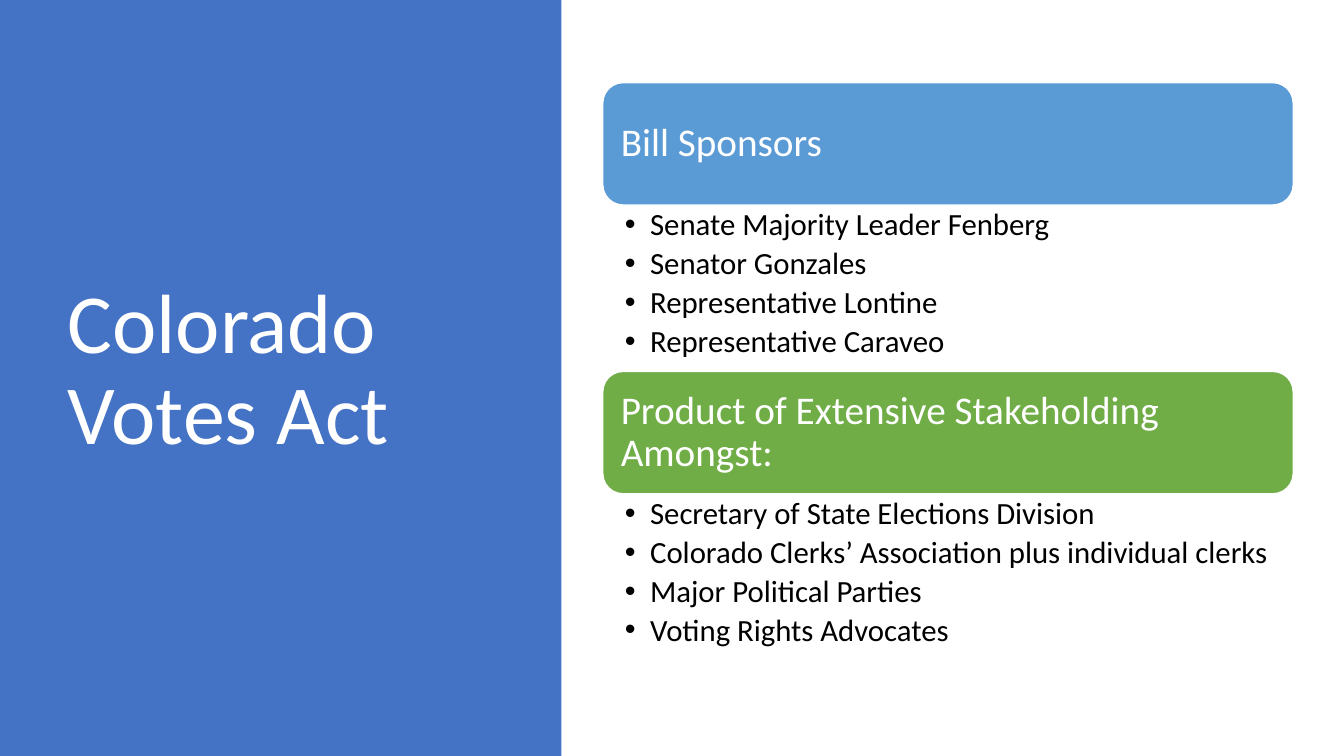
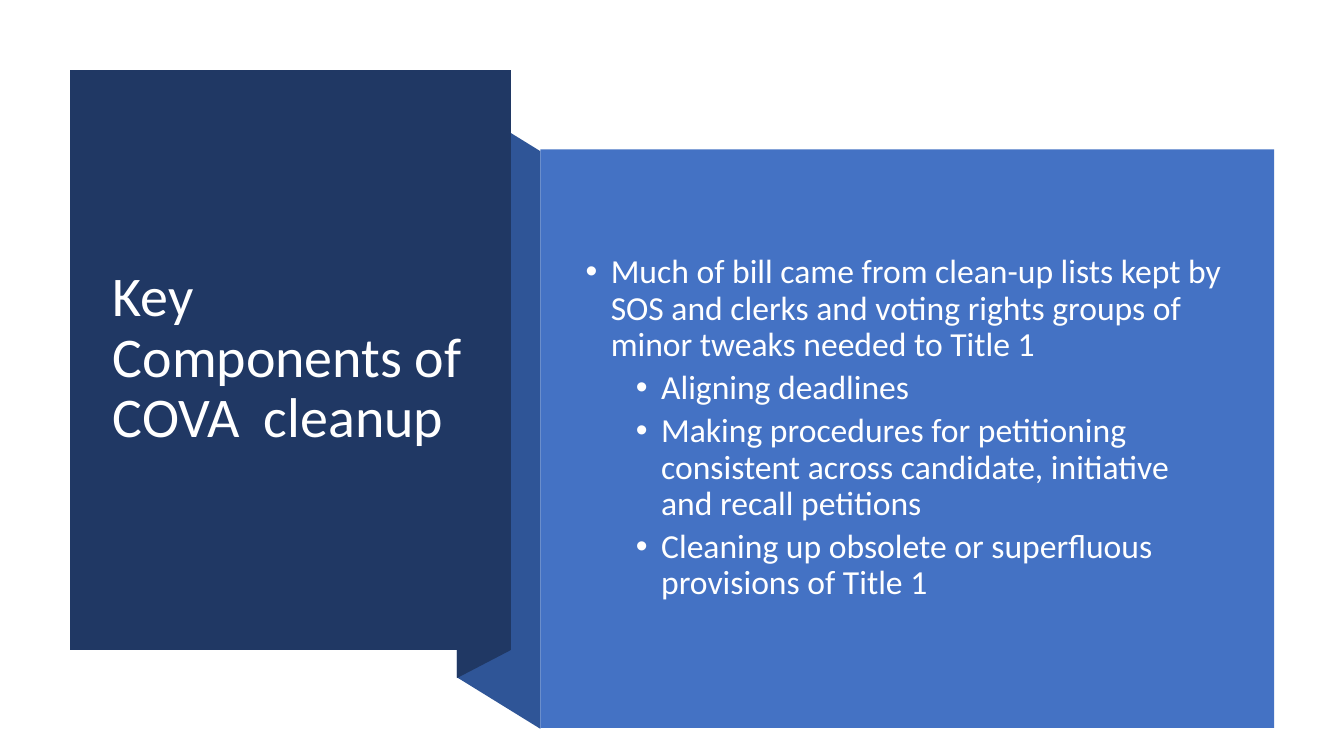
from dataclasses import dataclass

import pptx
import pptx.dml.color
import pptx.enum.shapes
import pptx.enum.text
import pptx.util
from lxml import etree

Inches, Pt = pptx.util.Inches, pptx.util.Pt
SHAPE = pptx.enum.shapes.MSO_SHAPE
ANCHOR = pptx.enum.text.MSO_ANCHOR
DRAWING = "{http://schemas.openxmlformats.org/drawingml/2006/main}"

SLIDE_WIDTH, SLIDE_HEIGHT = Inches(13.33), Inches(7.5)
BULLET_INDENT = 0.25
TEXT_INSETS = (0.1, 0.05)


@dataclass(frozen=True)
class Theme:
    font: str = "Calibri"
    bullet_font: str = "Arial"
    blue: str = "4472C4"
    light_blue: str = "5B9BD5"
    green: str = "70AD47"
    navy: str = "203864"
    fold_blue: str = "2F5597"
    white: str = "FFFFFF"
    black: str = "000000"
    large_title: int = 60
    title: int = 40
    heading: int = 28
    body: int = 24
    item: int = 22
    line_spacing: float = 0.9


THEME = Theme()


def across(percent):
    return round(SLIDE_WIDTH * percent / 100)


def down(percent):
    return round(SLIDE_HEIGHT * percent / 100)


def area(left, top, width, height):
    """Turn percentages of the slide into a position and a size."""
    return across(left), down(top), across(width), down(height)


def rgb(value):
    return pptx.dml.color.RGBColor.from_string(value)


def paint(shape, color, outline=None):
    shape.shadow.inherit = False
    shape.fill.solid()
    shape.fill.fore_color.rgb = rgb(color)
    if outline:
        shape.line.color.rgb = rgb(outline)
        shape.line.width = Pt(1)
    else:
        shape.line.fill.background()


def add_panel(page, place, color, kind=SHAPE.RECTANGLE, outline=None):
    panel = page.shapes.add_shape(kind, *place)
    paint(panel, color, outline)
    return panel


def add_outline(page, corners, color):
    """Draw a closed polygon whose corners are percentages of the slide."""
    points = [(across(x), down(y)) for x, y in corners]
    builder = page.shapes.build_freeform(*points[0], scale=1.0)
    builder.add_line_segments(points[1:], close=True)
    paint(builder.convert_to_shape(), color)


def set_bullet(para, indent):
    properties = para._p.get_or_add_pPr()
    properties.set("marL", str(Inches(indent)))
    properties.set("indent", str(-Inches(BULLET_INDENT)))
    etree.SubElement(properties, DRAWING + "buFont", typeface=THEME.bullet_font)
    etree.SubElement(properties, DRAWING + "buChar", char="•")


def write(box, entries, size, color, insets=TEXT_INSETS, anchor=ANCHOR.MIDDLE,
          indents=None, before=None, after=0):
    """Fill a box from (level, text) entries; indents and before go by level."""
    frame = box.text_frame
    frame.word_wrap = True
    frame.vertical_anchor = anchor
    frame.margin_left = frame.margin_right = Inches(insets[0])
    frame.margin_top = frame.margin_bottom = Inches(insets[1])
    for number, (level, text) in enumerate(entries):
        para = frame.add_paragraph() if number else frame.paragraphs[0]
        para.text = text
        para.level = level
        para.alignment = pptx.enum.text.PP_ALIGN.LEFT
        para.line_spacing = THEME.line_spacing
        para.space_before = Pt(before[level] if before else 0)
        para.space_after = Pt(after)
        if indents:
            set_bullet(para, indents[level])
        para.font.name = THEME.font
        para.font.size = Pt(size)
        para.font.color.rgb = rgb(color)


def add_text(page, place, entries, size, color, **layout):
    write(page.shapes.add_textbox(*place), entries, size, color, **layout)


def add_title(page, place, text, size):
    add_text(page, place, [(0, text)], size, THEME.white)


def add_sections(page, sections):
    """Stack coloured headings, each with its bulleted list below."""
    left, first_top, width = 44.85, 10.93, 51.38
    heading_height, list_height = 16.2, 22
    for number, (heading, color, items) in enumerate(sections):
        top = first_top + number * (heading_height + list_height)
        band = add_panel(page, area(left, top, width, heading_height), color,
                         SHAPE.ROUNDED_RECTANGLE, THEME.white)
        write(band, [(0, heading)], THEME.heading, THEME.white, insets=(0.12, 0.12))
        add_text(page, area(left, top + heading_height, width, list_height),
                 [(1, item) for item in items], THEME.item, THEME.black,
                 insets=(0.22, 0.04), anchor=ANCHOR.TOP,
                 indents={1: BULLET_INDENT}, after=4)


def add_folded_ribbon(page):
    """Draw the navy panel and the fold that leads behind it to the blue panel."""
    panel_left, panel_top, panel_right, panel_bottom = 5.2, 9.3, 38, 86
    fold_left, fold_right = 34, 40.2
    add_outline(page, [(fold_right, 96.4), (fold_left, 89.6),
                       (fold_left, 13.2), (fold_right, 20)], THEME.fold_blue)
    add_outline(page, [(panel_right, panel_bottom), (fold_left, 89.7),
                       (fold_left, 13.1), (panel_right, panel_top)], THEME.navy)
    add_outline(page, [(panel_left, panel_top), (panel_right, panel_top),
                       (panel_right, panel_bottom), (panel_left, panel_bottom)],
                THEME.navy)
    add_panel(page, area(fold_right, 19.75, 54.6, 76.55), THEME.blue)


def build_act_page(page):
    add_panel(page, area(0, 0, 41.77, 100), THEME.blue)
    add_title(page, area(4.28, 9.07, 31.2, 80.27), "Colorado Votes Act",
              THEME.large_title)
    add_sections(page, [
        ("Bill Sponsors", THEME.light_blue, [
            "Senate Majority Leader Fenberg",
            "Senator Gonzales",
            "Representative Lontine",
            "Representative Caraveo",
        ]),
        ("Product of Extensive Stakeholding Amongst:", THEME.green, [
            "Secretary of State Elections Division",
            "Colorado Clerks’ Association plus individual clerks",
            "Major Political Parties",
            "Voting Rights Advocates",
        ]),
    ])


def build_cleanup_page(page):
    add_folded_ribbon(page)
    add_title(page, area(7.65, 14.27, 27.83, 66.53),
              "Key Components of COVA\tcleanup", THEME.title)
    add_text(page, area(42.83, 25.07, 48.83, 63.2), [
        (0, "Much of bill came from clean-up lists kept by SOS and clerks and "
            "voting rights groups of minor tweaks needed to Title 1"),
        (1, "Aligning deadlines"),
        (1, "Making procedures for petitioning consistent across candidate, "
            "initiative and recall petitions"),
        (1, "Cleaning up obsolete or superfluous provisions of Title 1"),
    ], THEME.body, THEME.white, indents=(BULLET_INDENT, 3 * BULLET_INDENT),
        before=(10, 5))


def main():
    deck = pptx.Presentation()
    deck.slide_width, deck.slide_height = SLIDE_WIDTH, SLIDE_HEIGHT
    blank = deck.slide_layouts[6]
    for build in (build_act_page, build_cleanup_page):
        build(deck.slides.add_slide(blank))
    deck.save("out.pptx")


if __name__ == "__main__":
    main()
